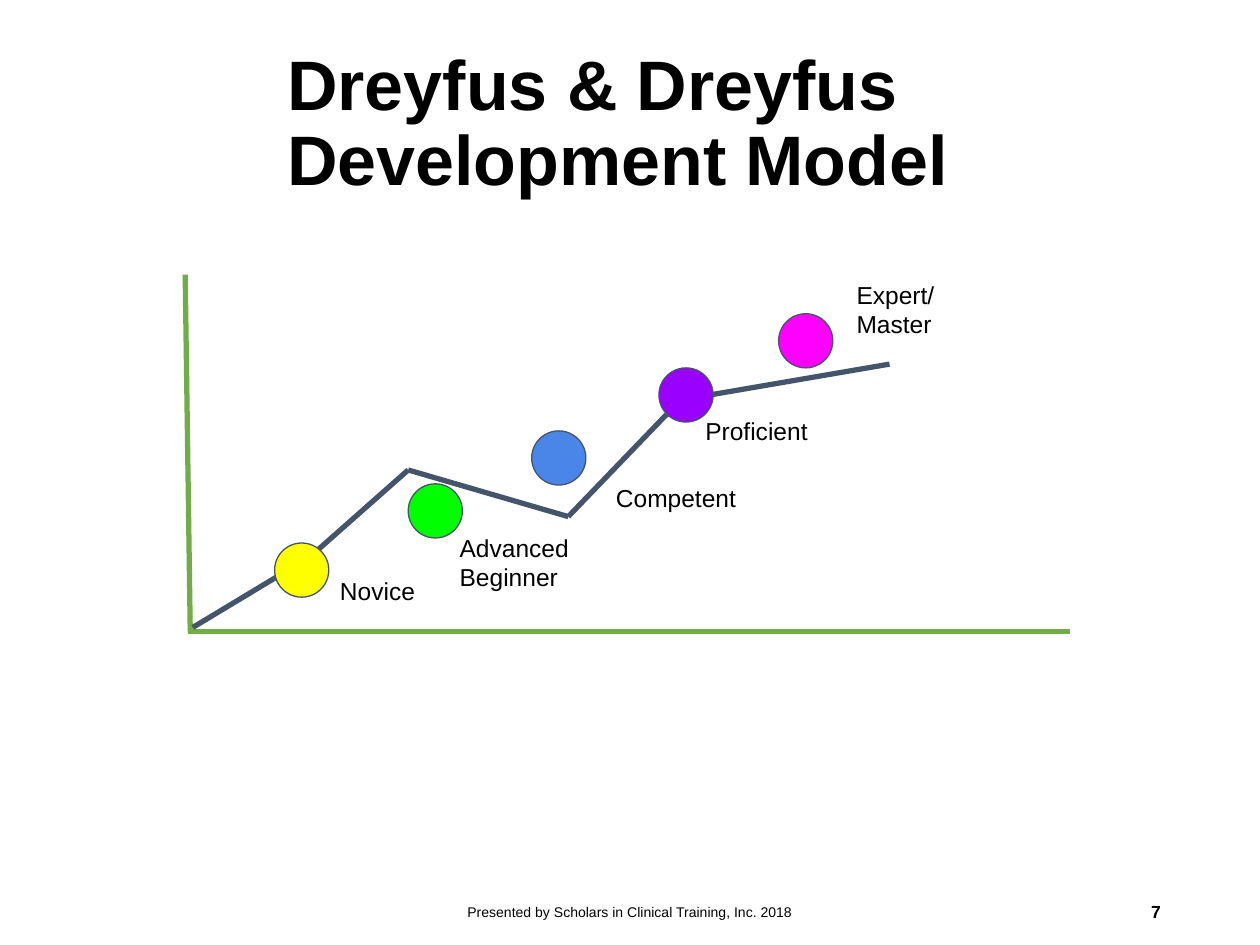
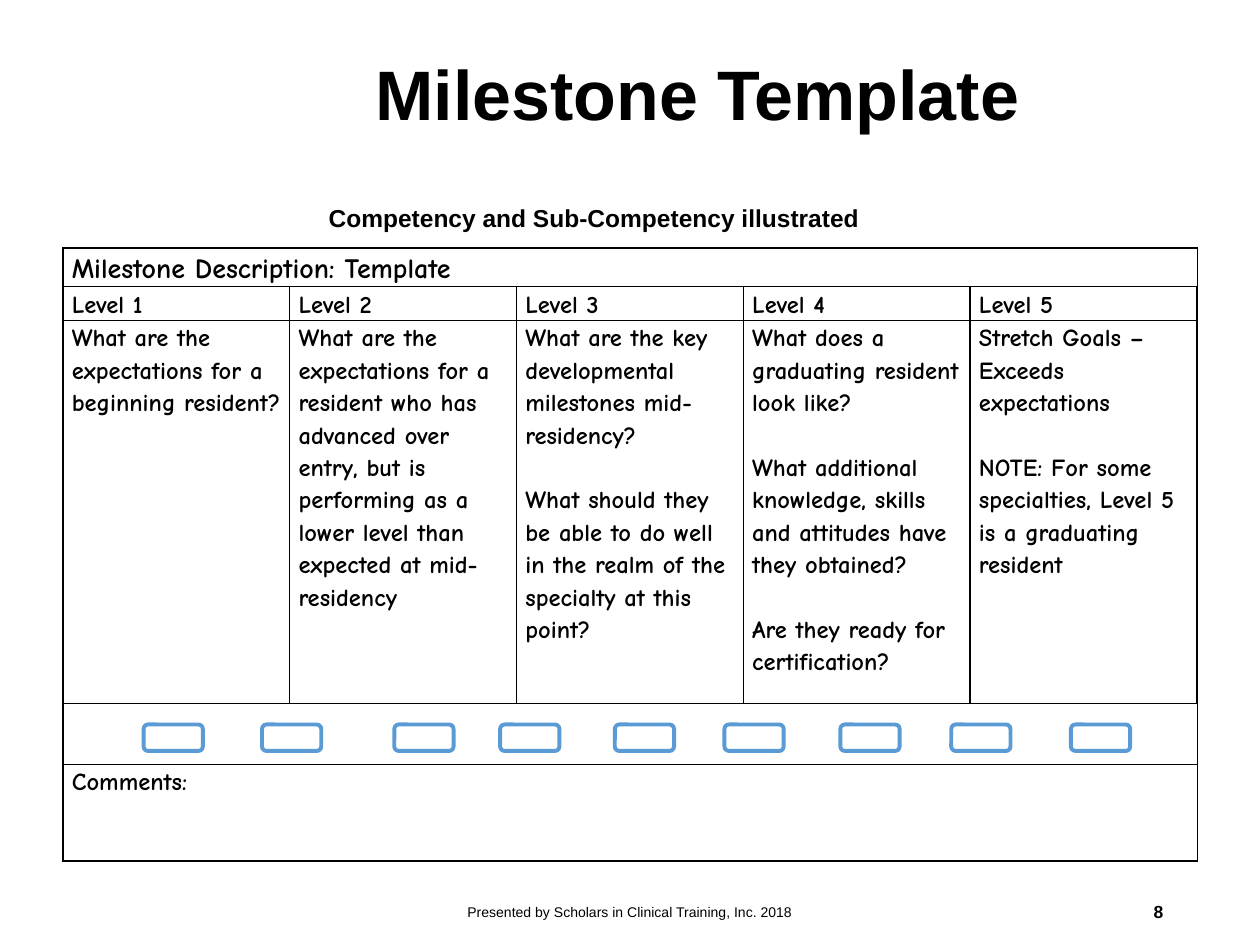
from dataclasses import dataclass
from itertools import pairwise

from lxml import etree
from pptx import Presentation
from pptx import util as u
from pptx.dml.color import RGBColor
from pptx.enum import shapes, text
from pptx.oxml.ns import qn

COLUMNS, ROWS = 100, 75
CELL = u.Inches(0.1)
TITLE_ONLY = 5


@dataclass(frozen=True)
class Theme:
    font: str = "Arial"
    table_font: str = "Comic Neue"
    ink: str = "000000"
    axis: str = "70AD47"
    curve: str = "44546A"
    checkbox: str = "5B9BD5"
    title: int = 40
    table_heading: int = 16
    body: int = 14
    number: int = 10
    footer: int = 8
    thick_line: float = 3
    checkbox_line: float = 2.25
    circle_line: float = 0.75
    outer_border: float = 1
    inner_border: float = 0.5


THEME = Theme()


@dataclass(frozen=True)
class Frame:
    """A rectangle in grid columns and rows."""
    left: float
    top: float
    width: float
    height: float

    def lengths(self) -> tuple:
        return tuple(grid(n) for n in (self.left, self.top, self.width, self.height))


@dataclass(frozen=True)
class Stage:
    label: str
    color: str
    circle: tuple[float, float]
    label_frame: Frame


CIRCLE_SIZE = 4.3
STAGES = [
    Stage("Novice", "FFFF00", (21.8, 43.1), Frame(26, 44.7, 11, 3.3)),
    Stage("Advanced Beginner", "00FF00", (32.4, 38.4), Frame(35.5, 41.3, 11, 3.3)),
    Stage("Competent", "4A86E8", (42.2, 34.2), Frame(47.9, 37.3, 11.7, 3.3)),
    Stage("Proficient", "9900FF", (52.3, 29.2), Frame(55, 32, 11, 3.3)),
    Stage("Expert/\nMaster", "FF00FF", (61.8, 24.9), Frame(67, 21.2, 11, 3.3)),
]
AXES = [((14.7, 21.8), (15.1, 50.1)), ((14.9, 50.1), (84.9, 50.1))]
CURVE = [(15.3, 49.8), (24.6, 44.2), (32.4, 37.3), (45.1, 41),
         (52.9, 32.9), (56.6, 31.3), (70.6, 28.9)]

TABLE_FRAME = Frame(5, 19.7, 90, 48.4)
ROW_HEIGHTS = [2.9, 2.6, 30.4, 4.8, 7.7]
LEVELS = [
    "What are the expectations for a beginning resident?",
    "What are the expectations for a resident who has advanced over entry, "
    "but is performing as a lower level than expected at mid-residency",
    "What are the key developmental milestones mid-residency?\n"
    "What should they be able to do well in the realm of the specialty at this point?",
    "What does a graduating resident look like?\n"
    "What additional knowledge, skills and attitudes have they obtained?\n"
    "Are they ready for certification?",
    "Stretch Goals – Exceeds expectations\n"
    "NOTE: For some specialties, Level 5 is a graduating resident",
]
TABLE_TEXT = [
    ["Milestone Description: Template"],
    [f"Level {number}" for number in range(1, len(LEVELS) + 1)],
    LEVELS,
    [""],
    ["Comments:"],
]
LINE_HEIGHT = 18.5
CHECKBOX_LEFTS = [11.4, 20.8, 31.3, 39.7, 48.8, 57.5, 66.7, 75.5, 85]


def grid(count: float) -> int:
    return round(count * CELL)


def rgb(color: str) -> RGBColor:
    return RGBColor.from_string(color)


def format_text(frame, size: int, bold: bool = False, font: str = THEME.font,
                align=text.PP_ALIGN.LEFT, spacing: float = 1, gap: float = 0) -> None:
    """Format every paragraph; gap is the space in points between paragraphs."""
    for index, para in enumerate(frame.paragraphs):
        para.alignment = align
        para.line_spacing = spacing
        para.space_before = u.Pt(gap if index else 0)
        for target in (para, *para.runs):
            target.font.name = font
            target.font.size = u.Pt(size)
            target.font.bold = bold
            target.font.color.rgb = rgb(THEME.ink)


def set_insets(frame, side: float, end: float) -> None:
    frame.margin_left = frame.margin_right = u.Inches(side)
    frame.margin_top = frame.margin_bottom = u.Inches(end)


def add_text(page, words: str, place: Frame, size: int, inset: float = 0.05,
             anchor=text.MSO_ANCHOR.TOP, **style) -> None:
    frame = page.shapes.add_textbox(*place.lengths()).text_frame
    frame.word_wrap = True
    frame.vertical_anchor = anchor
    set_insets(frame, 0.1, inset)
    frame.text = words
    format_text(frame, size, **style)


def add_page(deck, title: str, place: Frame, number: int, number_left: float):
    """Add a slide with its title, footer and page number."""
    page = deck.slides.add_slide(deck.slide_layouts[TITLE_ONLY])
    box = page.shapes.title
    box.left, box.top, box.width, box.height = place.lengths()
    frame = box.text_frame
    frame.text = title
    frame.word_wrap = True
    frame.auto_size = text.MSO_AUTO_SIZE.NONE
    frame.vertical_anchor = text.MSO_ANCHOR.MIDDLE
    set_insets(frame, 0.1, 0.1)
    format_text(frame, THEME.title, bold=True, spacing=0.9)
    add_text(page, "Presented by Scholars in Clinical Training, Inc. 2018",
             Frame(33.1, 70.4, 33.8, 4), THEME.footer,
             anchor=text.MSO_ANCHOR.MIDDLE, align=text.PP_ALIGN.CENTER)
    add_text(page, str(number), Frame(number_left, 71, 22.5, 4), THEME.number,
             bold=True, align=text.PP_ALIGN.RIGHT)
    return page


def add_line(page, start: tuple, end: tuple, color: str) -> None:
    line = page.shapes.add_connector(shapes.MSO_CONNECTOR.STRAIGHT,
                                     *map(grid, (*start, *end)))
    line.line.color.rgb = rgb(color)
    line.line.width = u.Pt(THEME.thick_line)
    etree.SubElement(line._element.spPr, qn("a:effectLst"))


def add_outline(page, kind, place: Frame, color: str, width: float,
                fill: str | None = None):
    shape = page.shapes.add_shape(kind, *place.lengths())
    shape.shadow.inherit = False
    shape.line.color.rgb = rgb(color)
    shape.line.width = u.Pt(width)
    if fill:
        shape.fill.solid()
        shape.fill.fore_color.rgb = rgb(fill)
    else:
        shape.fill.background()
    return shape


def set_borders(cell, widths: dict[str, float]) -> None:
    properties = cell._tc.get_or_add_tcPr()
    for side, width in widths.items():
        border = etree.SubElement(properties, qn(f"a:ln{side}"), w=str(u.Pt(width)))
        fill = etree.SubElement(border, qn("a:solidFill"))
        etree.SubElement(fill, qn("a:srgbClr"), val=THEME.ink)


def add_milestone_table(page) -> None:
    row_count, column_count = len(TABLE_TEXT), len(LEVELS)
    table = page.shapes.add_table(row_count, column_count,
                                  *TABLE_FRAME.lengths()).table
    table.first_row = table.horz_banding = False
    for column in table.columns:
        column.width = grid(TABLE_FRAME.width / column_count)
    for row, height in zip(table.rows, ROW_HEIGHTS):
        row.height = grid(height)

    heavy_rows, heavy_columns = {0, 2, row_count}, {0, 4, column_count}

    def border(edge: int, heavy: set[int]) -> float:
        return THEME.outer_border if edge in heavy else THEME.inner_border

    for r, words in enumerate(TABLE_TEXT):
        for c in range(column_count):
            cell = table.cell(r, c)
            set_borders(cell, {"L": border(c, heavy_columns),
                               "R": border(c + 1, heavy_columns),
                               "T": border(r, heavy_rows),
                               "B": border(r + 1, heavy_rows)})
            cell.fill.background()
            set_insets(cell, 0.07, 0)
        if len(words) == 1:
            table.cell(r, 0).merge(table.cell(r, column_count - 1))
        for c, entry in enumerate(words):
            frame = table.cell(r, c).text_frame
            frame.text = entry
            format_text(frame, THEME.body if r else THEME.table_heading, bold=True,
                        font=THEME.table_font, spacing=1.15, gap=LINE_HEIGHT)


def build_development_model(deck) -> None:
    page = add_page(deck, "Dreyfus & Dreyfus Development Model",
                    Frame(21.8, 2.7, 71.4, 14.5), 7, 70.6)
    for start, end in AXES:
        add_line(page, start, end, THEME.axis)
    for start, end in pairwise(CURVE):
        add_line(page, start, end, THEME.curve)
    for stage in STAGES:
        add_outline(page, shapes.MSO_SHAPE.FLOWCHART_CONNECTOR,
                    Frame(*stage.circle, CIRCLE_SIZE, CIRCLE_SIZE),
                    THEME.curve, THEME.circle_line, stage.color)
        add_text(page, stage.label, stage.label_frame, THEME.body, inset=0.1)


def build_milestone_template(deck) -> None:
    page = add_page(deck, "Milestone Template", Frame(28.8, 3, 66.2, 9.5), 8, 70.8)
    add_milestone_table(page)
    for left in CHECKBOX_LEFTS:
        add_outline(page, shapes.MSO_SHAPE.ROUNDED_RECTANGLE,
                    Frame(left, 57.5, 4.7, 2.1), THEME.checkbox, THEME.checkbox_line)
    add_text(page, "Competency and Sub-Competency illustrated",
             Frame(25.1, 15.6, 56.6, 4), THEME.body, bold=True)


def main() -> None:
    deck = Presentation()
    deck.slide_width, deck.slide_height = grid(COLUMNS), grid(ROWS)
    build_development_model(deck)
    build_milestone_template(deck)
    deck.save("out.pptx")


if __name__ == "__main__":
    main()
